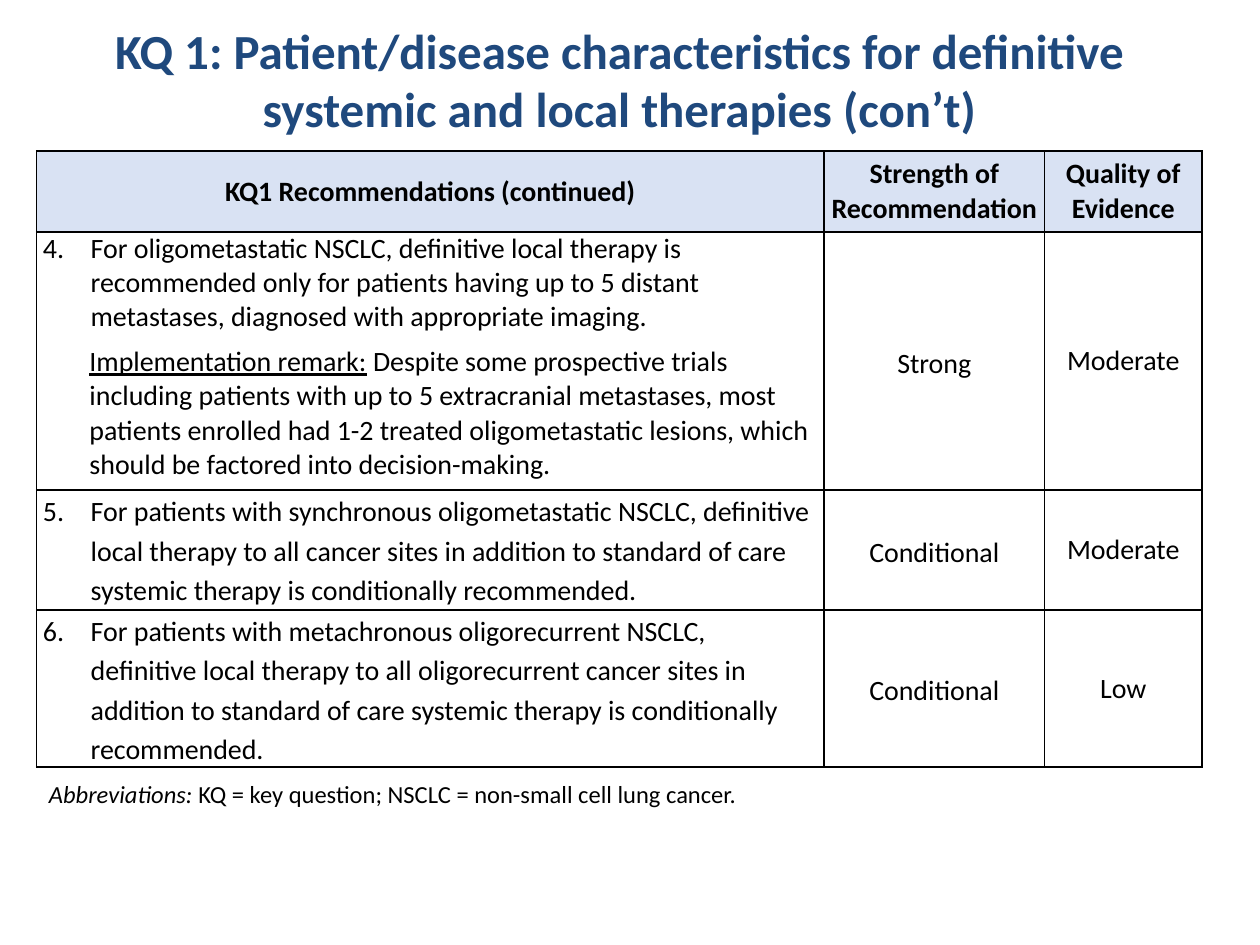
from lxml.etree import SubElement
from pptx import Presentation
from pptx.dml.color import RGBColor
from pptx.enum.text import MSO_ANCHOR, MSO_AUTO_SIZE, PP_ALIGN
from pptx.oxml import parse_xml
from pptx.oxml.ns import nsdecls, qn
from pptx.util import Inches, Pt

deck = Presentation()
deck.slide_width, deck.slide_height = Inches(10), Inches(7.5)
W, H = deck.slide_width, deck.slide_height
slide = deck.slides.add_slide(deck.slide_layouts[5])
left, wide = int(W * 0.029), int(W * 0.925)


def ink(code):
    return RGBColor.from_string(code)


def add_run(para, text, size=16, color="000000", bold=False, italic=False, under=False):
    run = para.add_run()
    run.text = text
    font = run.font
    font.name, font.size, font.color.rgb = "Calibri", Pt(size), ink(color)
    font.bold, font.italic, font.underline = bold, italic, under


title = slide.shapes.title
title.left, title.top, title.width, title.height = left, Inches(0.11), wide, Inches(0.92)
frame = title.text_frame
frame.word_wrap, frame.auto_size = True, MSO_AUTO_SIZE.NONE
frame.vertical_anchor = MSO_ANCHOR.TOP
para = frame.paragraphs[0]
para.alignment = PP_ALIGN.CENTER
add_run(para, "KQ 1: Patient/disease characteristics for definitive systemic and local therapies (con’t)",
        28, "1F497D", bold=True)

rows = [
    ("KQ1 Recommendations (continued)", "Strength of Recommendation", "Quality of Evidence"),
    ("For oligometastatic NSCLC, definitive local therapy is recommended only for patients having "
     "up to 5 distant metastases, diagnosed with appropriate imaging.", "Strong", "Moderate"),
    ("For patients with synchronous oligometastatic NSCLC, definitive local therapy to all cancer "
     "sites in addition to standard of care systemic therapy is conditionally recommended.",
     "Conditional", "Moderate"),
    ("For patients with metachronous oligorecurrent NSCLC, definitive local therapy to all "
     "oligorecurrent cancer sites in addition to standard of care systemic therapy is "
     "conditionally recommended.", "Conditional", "Low"),
]
highs = [0.64, 2.05, 0.95, 1.11]
table = slide.shapes.add_table(len(rows), 3, left, int(H * 0.16), wide, Inches(sum(highs))).table
table.first_row = table.horz_banding = False
for col, share in zip(table.columns, (0.625, 0.175, 0.125)):
    col.width = int(W * share)

for r, (row, high) in enumerate(zip(rows, highs)):
    table.rows[r].height = Inches(high)
    for c, text in enumerate(row):
        cell = table.cell(r, c)
        cell.margin_left = cell.margin_right = Inches(0.05)
        cell.margin_top = cell.margin_bottom = 0
        props = cell._tc.get_or_add_tcPr()
        for side in "LRTB":
            props.append(parse_xml(
                f'<a:ln{side} {nsdecls("a")} w="{Pt(1)}"><a:solidFill>'
                f'<a:srgbClr val="000000"/></a:solidFill></a:ln{side}>'))
        if r == 0:
            cell.fill.solid()
            cell.fill.fore_color.rgb = ink("D9E2F3")
        else:
            cell.fill.background()
        para = cell.text_frame.paragraphs[0]
        if r and c == 0:
            cell.vertical_anchor = MSO_ANCHOR.TOP
            form = para._p.get_or_add_pPr()
            form.set("marL", str(Inches(0.38)))
            form.set("indent", str(Inches(-0.38)))
            SubElement(form, qn("a:buFont"), typeface="+mj-lt")
            SubElement(form, qn("a:buAutoNum"), type="arabicPeriod", startAt=str(r + 3))
        else:
            cell.vertical_anchor = MSO_ANCHOR.MIDDLE
            para.alignment = PP_ALIGN.CENTER
        if (r and c == 1) or (r > 1 and c == 0):
            para.line_spacing = 1.15
        add_run(para, text, bold=r == 0)

cell = table.cell(1, 0)
cell.text_frame.paragraphs[0].space_after = Pt(6)
para = cell.text_frame.add_paragraph()
para.level = 1
form = para._p.get_or_add_pPr()
form.set("marL", str(Inches(0.37)))
form.set("indent", "0")
add_run(para, "Implementation remark:", under=True)
add_run(para, " Despite some prospective trials including patients with up to 5 extracranial "
        "metastases, most patients enrolled had 1-2 treated oligometastatic lesions, which "
        "should be factored into decision-making.")

note = slide.shapes.add_textbox(left, Inches(6.13), int(W * 0.791), Inches(0.34))
frame = note.text_frame
frame.word_wrap, frame.auto_size = True, MSO_AUTO_SIZE.SHAPE_TO_FIT_TEXT
para = frame.paragraphs[0]
add_run(para, "Abbreviations: ", 14, italic=True)
add_run(para, "KQ = key question; NSCLC = non-small cell lung cancer.", 14)

deck.save("out.pptx")
